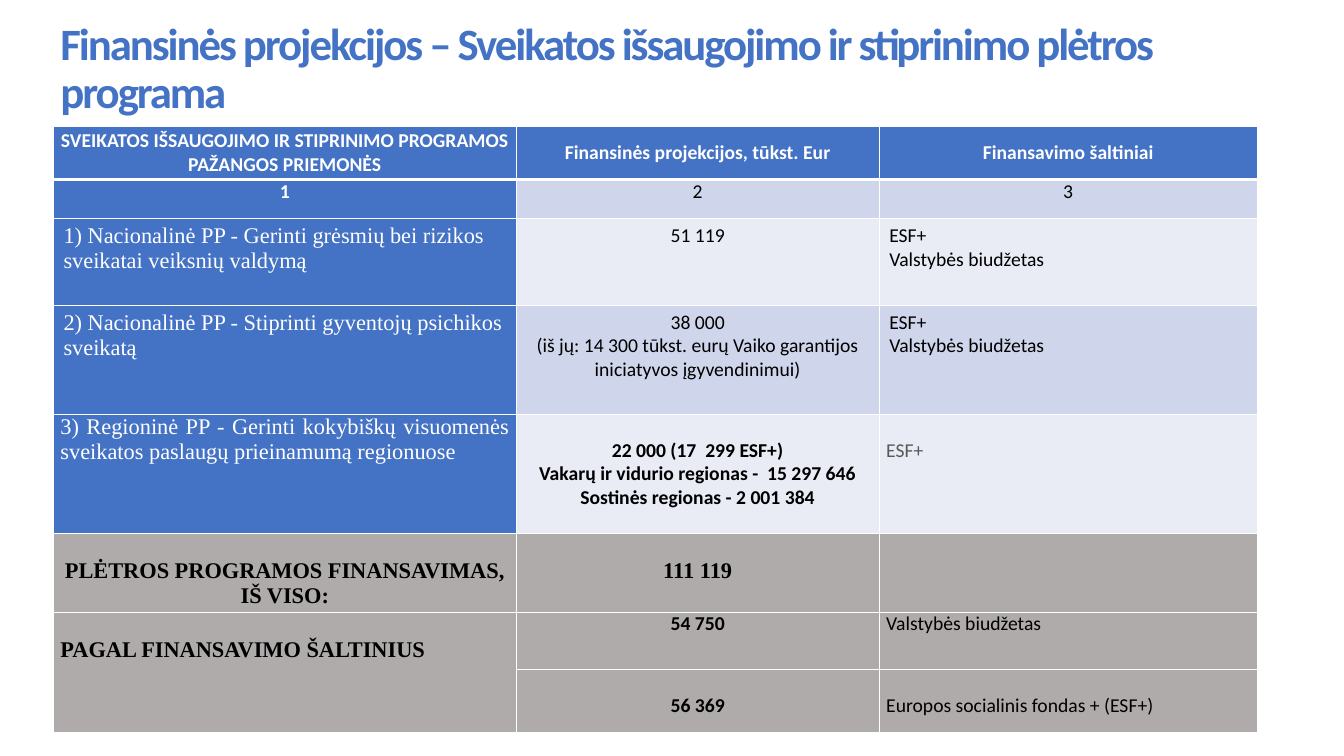
"""Build the slide of financial projections for the health programme."""
from pptx import Presentation
from pptx.dml.color import RGBColor as Rgb
from pptx.enum.text import MSO_ANCHOR as Anchor, PP_ALIGN as Align
from pptx.oxml import parse_xml
from pptx.oxml.ns import nsdecls
from pptx.util import Inches, Pt

HUES = {"blue": "4472C4", "white": "FFFFFF", "black": "000000", "gray": "595959",
        "dark": "CFD5EA", "pale": "E9EBF5", "total": "AFABAB"}
SANS, SERIF = "Calibri", "Times New Roman"
MID, LEFT, JUST = Align.CENTER, Align.LEFT, Align.JUSTIFY

TITLE = "Finansinės projekcijos – Sveikatos išsaugojimo ir stiprinimo plėtros programa"
COLS = [4.59, 3.6, 3.75]
ROWS = [0.53, 0.39, 0.86, 1.08, 1.18, 0.74, 0.57, 0.63]
FILLS = [["blue"] * 3, ["blue", "dark", "dark"], ["blue", "pale", "pale"],
         ["blue", "dark", "dark"], ["blue", "pale", "pale"]] + [["total"] * 3] * 3

HEAD = dict(hue="white", bold=True, align=MID)
GOAL = dict(face=SERIF, size=16, hue="white")
SUM = dict(face=SERIF, size=16, bold=True, top=0.25)
NUM = dict(align=MID)
BOLD = dict(align=MID, bold=True)
OPEN = dict(side=0.1, top=0.05)
FUNDS = ["ESF+", "Valstybės biudžetas"]

CELLS = [
    [(["SVEIKATOS IŠSAUGOJIMO IR STIPRINIMO PROGRAMOS PAŽANGOS PRIEMONĖS"], HEAD),
     (["Finansinės projekcijos, tūkst. Eur"], HEAD),
     (["Finansavimo šaltiniai"], HEAD)],
    [(["1"], HEAD), (["2"], NUM), (["3"], NUM)],
    [(["1) Nacionalinė PP - Gerinti grėsmių bei rizikos sveikatai veiksnių valdymą"],
      GOAL | OPEN),
     (["51 119"], NUM | OPEN), (FUNDS, OPEN)],
    [(["2) Nacionalinė PP - Stiprinti gyventojų psichikos sveikatą"], GOAL | OPEN),
     (["38 000", "(iš jų: 14 300 tūkst. eurų Vaiko garantijos iniciatyvos įgyvendinimui)"],
      NUM | OPEN),
     (FUNDS, OPEN)],
    [(["3) Regioninė PP - Gerinti kokybiškų visuomenės sveikatos paslaugų "
       "prieinamumą regionuose"], GOAL | dict(align=JUST)),
     (["22 000 (17  299 ESF+)", "Vakarų ir vidurio regionas -  15 297 646",
       "Sostinės regionas - 2 001 384"], BOLD | dict(top=0.24)),
     (["ESF+"], dict(hue="gray", top=0.24))],
    [(["PLĖTROS PROGRAMOS FINANSAVIMAS, IŠ VISO:"], SUM | NUM),
     (["111 119"], SUM | NUM), ([], {})],
    [(["PAGAL FINANSAVIMO ŠALTINIUS"], SUM | dict(align=JUST)),
     (["54 750"], BOLD), (["Valstybės biudžetas"], dict(align=JUST))],
    [([], {}), (["56 369"], BOLD | dict(top=0.24)),
     (["Europos socialinis fondas + (ESF+)"], dict(align=JUST, top=0.24))],
]


class Deck:
    """Hold the style and the current slide."""

    def __init__(self):
        self.show = Presentation()
        self.show.slide_width, self.show.slide_height = Inches(13.33), Inches(7.5)
        self.page = self.show.slides.add_slide(self.show.slide_layouts[6])

    def text(self, frame, lines, face=SANS, size=14, hue="black", bold=False, align=LEFT):
        """Fill a text frame, one paragraph for each line."""
        for num, line in enumerate(lines):
            para = frame.add_paragraph() if num else frame.paragraphs[0]
            para.alignment = align
            run = para.add_run()
            run.text = line
            font = run.font
            font.name, font.size, font.bold = face, Pt(size), bold
            font.color.rgb = Rgb.from_string(HUES[hue])

    def title(self, text, box):
        """Add the heading with tight letters."""
        frame = self.page.shapes.add_textbox(*map(Inches, box)).text_frame
        frame.word_wrap = True
        frame.vertical_anchor = Anchor.MIDDLE
        frame.margin_left = frame.margin_right = Inches(0.07)
        frame.margin_top = frame.margin_bottom = Inches(0.07)
        self.text(frame, [text], size=32, hue="blue", bold=True)
        para = frame.paragraphs[0]
        para.line_spacing = 0.9
        para.runs[0].font._element.set("spc", "-150")

    def edge(self, cell, top, base):
        """Draw the white borders of a cell."""
        prop = cell._tc.get_or_add_tcPr()
        for num, (side, wide) in enumerate(zip("LRTB", (1, 1, top, base))):
            prop.insert(num, parse_xml(
                f'<a:ln{side} {nsdecls("a")} w="{Pt(wide)}"><a:solidFill>'
                f'<a:srgbClr val="{HUES["white"]}"/></a:solidFill></a:ln{side}>'))

    def cell(self, cell, lines, fill, side=0.07, top=0, **look):
        """Fill one cell with colour and text."""
        cell.fill.solid()
        cell.fill.fore_color.rgb = Rgb.from_string(HUES[fill])
        cell.margin_left = cell.margin_right = Inches(side)
        cell.margin_top = Inches(top)
        cell.margin_bottom = Inches(0)
        self.text(cell.text_frame, lines, **look)

    def table(self, left, top):
        """Add the table of measures, sums and sources."""
        grid = self.page.shapes.add_table(
            len(ROWS), len(COLS), Inches(left), Inches(top),
            Inches(sum(COLS)), Inches(sum(ROWS))).table
        grid.first_row = grid.horz_banding = False
        for col, wide in zip(grid.columns, COLS):
            col.width = Inches(wide)
        for row, high in zip(grid.rows, ROWS):
            row.height = Inches(high)
        for r, line in enumerate(CELLS):
            for c, (text, look) in enumerate(line):
                item = grid.cell(r, c)
                self.cell(item, text, FILLS[r][c], **look)
                self.edge(item, 3 if r == 1 else 1, 3 if r == 0 else 1)
                if r == 0:
                    item.vertical_anchor = Anchor.MIDDLE
        grid.cell(6, 0).merge(grid.cell(7, 0))


def main():
    deck = Deck()
    deck.title(TITLE, (0.53, 0.2, 11.94, 0.99))
    deck.table(0.53, 1.25)
    deck.show.save("out.pptx")


if __name__ == "__main__":
    main()
